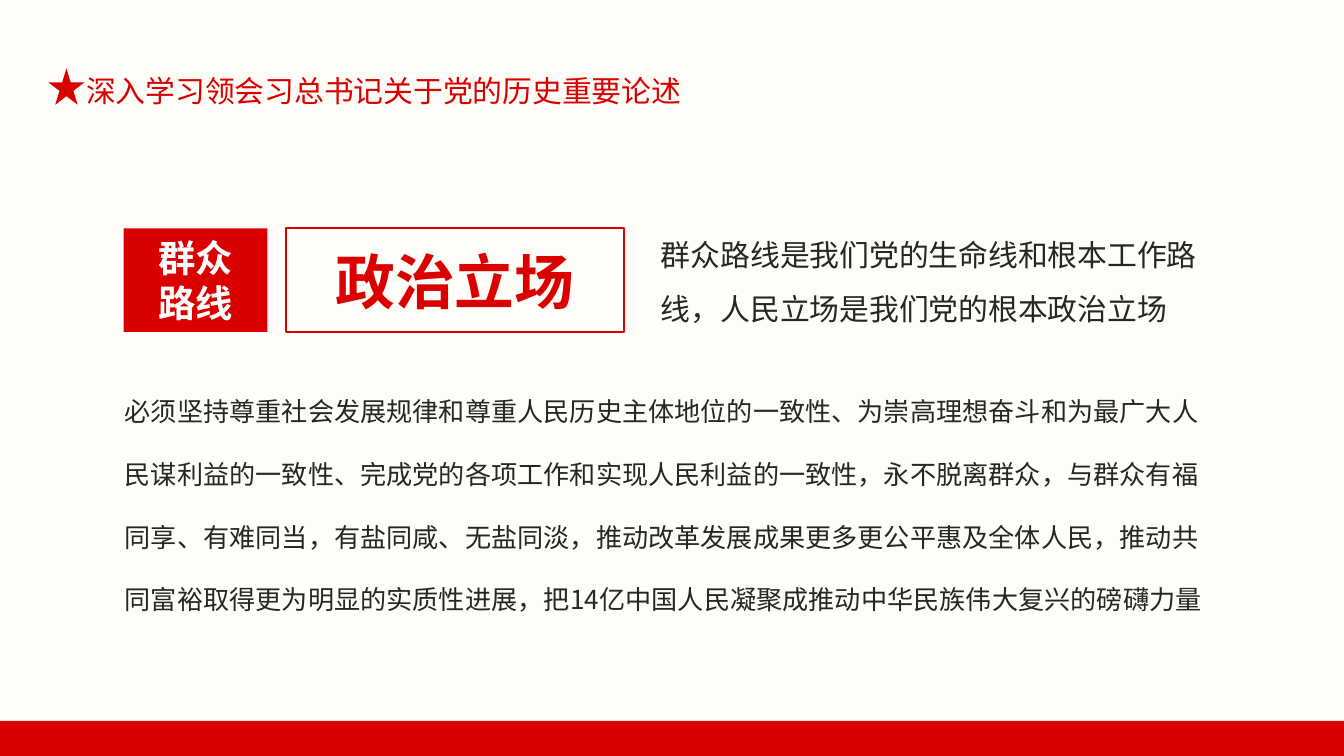
import pptx
import pptx.util
import pptx.dml.color
import pptx.enum.shapes
import pptx.enum.text
import pptx.oxml
import pptx.oxml.ns

Inches = pptx.util.Inches
Shape = pptx.enum.shapes.MSO_SHAPE
Align = pptx.enum.text.PP_ALIGN
Anchor = pptx.enum.text.MSO_ANCHOR
RED, DARK, WHITE, CREAM = "DA0000", "262626", "FFFFFF", "FFFDF7"
CJK_FONT = "Noto Sans CJK SC"


def paint(fill, color):
    fill.solid()
    fill.fore_color.rgb = pptx.dml.color.RGBColor.from_string(color)


def write(shape, lines, size, color, font=CJK_FONT, bold=False,
          align=Align.LEFT, anchor=Anchor.TOP, spacing=1, wrap=True):
    frame = shape.text_frame
    frame.word_wrap = wrap
    frame.auto_size = pptx.enum.text.MSO_AUTO_SIZE.NONE
    frame.vertical_anchor = anchor
    for index, line in enumerate(lines):
        paragraph = frame.add_paragraph() if index else frame.paragraphs[0]
        paragraph.alignment = align
        paragraph.line_spacing = spacing
        run = paragraph.add_run()
        run.text = line
        run.font.size = pptx.util.Pt(size)
        run.font.name = font
        run.font.bold = bold
        paint(run.font.fill, color)
        # East Asian typeface
        east_asian = pptx.oxml.parse_xml(
            '<a:ea xmlns:a="http://schemas.openxmlformats.org/drawingml/2006/main"'
            f' typeface="{CJK_FONT}"/>')
        run.font._element.find(pptx.oxml.ns.qn("a:latin")).addnext(east_asian)


# Slide (16:9) and background
presentation = pptx.Presentation()
presentation.slide_width = Inches(10)
presentation.slide_height = Inches(10) * 9 // 16
slide = presentation.slides.add_slide(presentation.slide_layouts[5])
paint(slide.background.fill, CREAM)

# Title
title = slide.shapes.title
title.left, title.top = Inches(0.54), Inches(0.49)
title.width, title.height = Inches(4.69), Inches(0.37)
write(title, ["深入学习领会习总书记关于党的历史重要论述"], 16, RED,
      font="Calibri", wrap=False)

# Star beside the title and bar along the foot
star = slide.shapes.add_shape(
    Shape.STAR_5_POINT, Inches(0.36), Inches(0.51), Inches(0.27), Inches(0.27))
bar_height = Inches(0.26)
bar = slide.shapes.add_shape(
    Shape.RECTANGLE, Inches(0), presentation.slide_height - bar_height,
    presentation.slide_width, bar_height)

# Summary beside the heading
summary = slide.shapes.add_textbox(
    Inches(4.82), Inches(1.58), Inches(4.26), Inches(0.86))
write(summary, ["群众路线是我们党的生命线和根本工作路线，人民立场是我们党的根本政治立场"],
      16, DARK, spacing=1.5)

# Heading group: outlined stance box and filled label
heading = slide.shapes.add_group_shape()
stance = heading.shapes.add_shape(
    Shape.ROUNDED_RECTANGLE, Inches(2.13), Inches(1.7), Inches(2.51), Inches(0.77))
stance.adjustments[0] = 0
stance.shadow.inherit = False
stance.fill.background()
paint(stance.line.fill, RED)
stance.line.width = pptx.util.Pt(1)
write(stance, ["政治立场"], 32, RED, bold=True,
      align=Align.CENTER, anchor=Anchor.MIDDLE)

label = heading.shapes.add_shape(
    Shape.RECTANGLE, Inches(0.92), Inches(1.7), Inches(1.07), Inches(0.77))
write(label, ["群众", "路线"], 20, WHITE, bold=True, align=Align.CENTER)

# Solid red shapes
for shape in (star, bar, label):
    shape.shadow.inherit = False
    paint(shape.fill, RED)
    shape.line.fill.background()

# Main paragraph
body = slide.shapes.add_textbox(
    Inches(0.83), Inches(2.66), Inches(8.25), Inches(1.99))
write(body, [
    "必须坚持尊重社会发展规律和尊重人民历史主体地位的一致性、"
    "为崇高理想奋斗和为最广大人民谋利益的一致性、"
    "完成党的各项工作和实现人民利益的一致性，永不脱离群众，"
    "与群众有福同享、有难同当，有盐同咸、无盐同淡，"
    "推动改革发展成果更多更公平惠及全体人民，"
    "推动共同富裕取得更为明显的实质性进展，"
    "把14亿中国人民凝聚成推动中华民族伟大复兴的磅礴力量"
], 14, DARK, spacing=2)

presentation.save("out.pptx")
